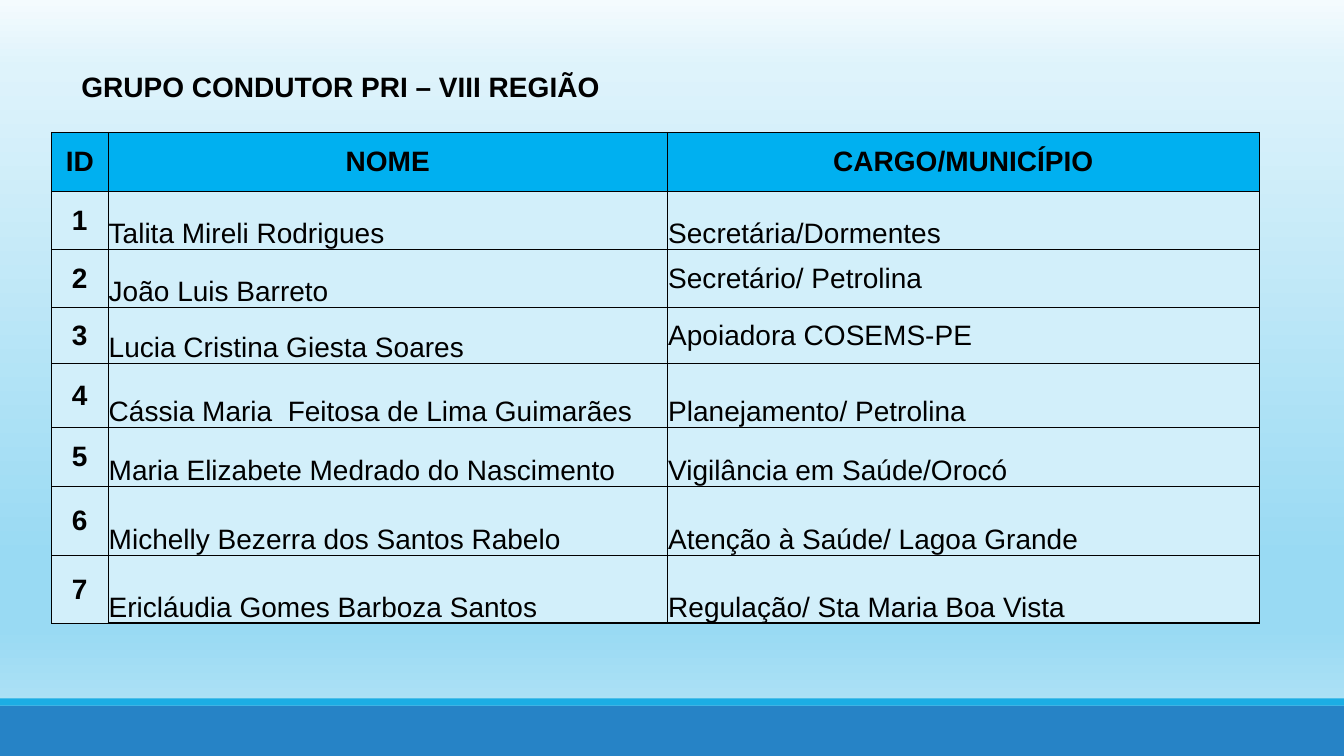
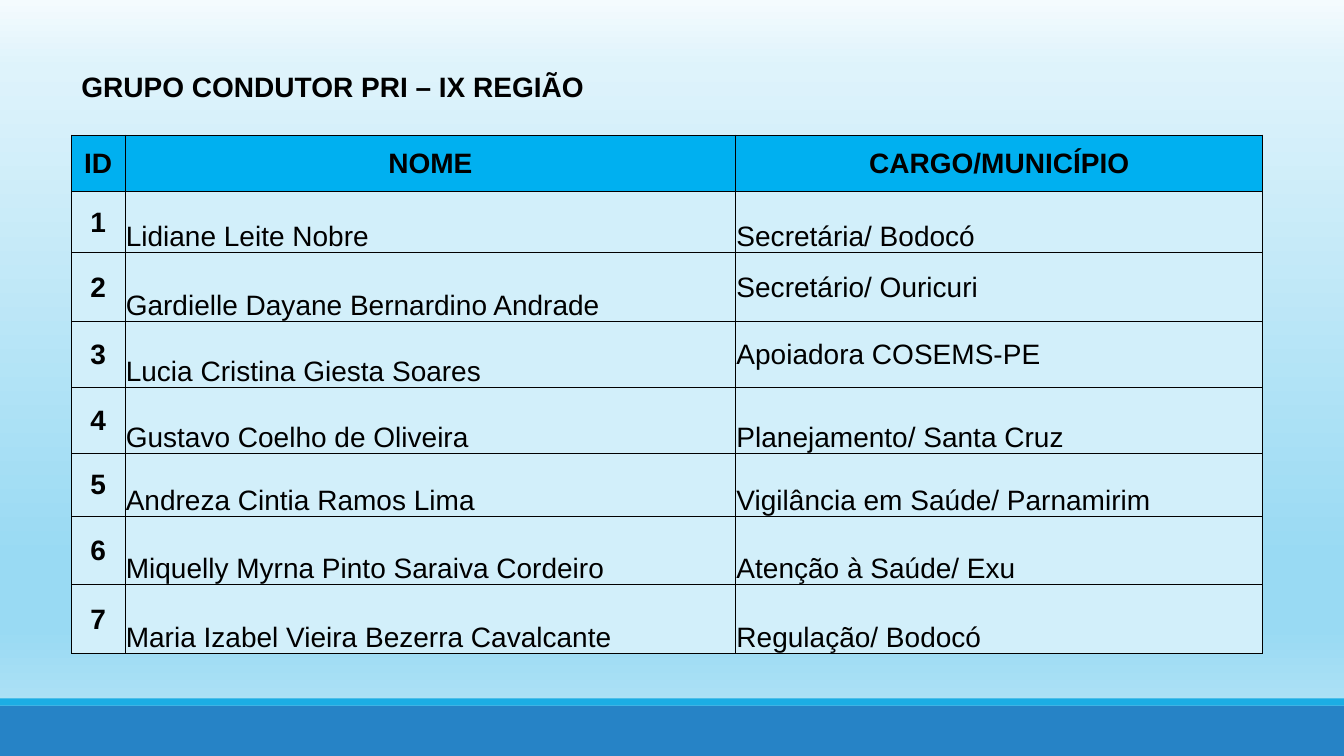
from dataclasses import dataclass

from lxml import etree
from pptx import Presentation
from pptx.dml.color import RGBColor
from pptx.enum import shapes, text
from pptx.oxml import ns
from pptx.util import Cm, Pt

HEADS = ("ID", "NOME", "CARGO/MUNICÍPIO")
GROUPS = [
    {
        "title": "GRUPO CONDUTOR PRI – VIII REGIÃO",
        "at": (1.3, 3.33),
        "cols": (1.42, 14.1, 14.91),
        "rows": (1.49, 1.46, 1.46, 1.41, 1.61, 1.49, 1.74, 1.71),
        "people": [
            ("Talita Mireli Rodrigues", "Secretária/Dormentes"),
            ("João Luis Barreto", "Secretário/ Petrolina"),
            ("Lucia Cristina Giesta Soares", "Apoiadora COSEMS-PE"),
            ("Cássia Maria  Feitosa de Lima Guimarães", "Planejamento/ Petrolina"),
            ("Maria Elizabete Medrado do Nascimento", "Vigilância em Saúde/Orocó"),
            ("Michelly Bezerra dos Santos Rabelo", "Atenção à Saúde/ Lagoa Grande"),
            ("Ericláudia Gomes Barboza Santos", "Regulação/ Sta Maria Boa Vista"),
        ],
    },
    {
        "title": "GRUPO CONDUTOR PRI – IX REGIÃO",
        "at": (1.8, 3.4),
        "cols": (1.35, 15.39, 13.28),
        "rows": (1.42, 1.55, 1.72, 1.66, 1.67, 1.58, 1.73, 1.73),
        "people": [
            ("Lidiane Leite Nobre", "Secretária/ Bodocó"),
            ("Gardielle Dayane Bernardino Andrade", "Secretário/ Ouricuri"),
            ("Lucia Cristina Giesta Soares", "Apoiadora COSEMS-PE"),
            ("Gustavo Coelho de Oliveira", "Planejamento/ Santa Cruz"),
            ("Andreza Cintia Ramos Lima", "Vigilância em Saúde/ Parnamirim"),
            ("Miquelly Myrna Pinto Saraiva Cordeiro", "Atenção à Saúde/ Exu"),
            ("Maria Izabel Vieira Bezerra Cavalcante", "Regulação/ Bodocó"),
        ],
    },
]
MID_ROLES = (2, 3)  # rows whose role is centred vertically
BOLD_RULES = (1, 5, 6, 7)  # rows with a thicker rule between name and role


@dataclass(frozen=True)
class Theme:
    font: str = "Arial"
    size: int = 20
    ink: str = "000000"
    head: str = "00B0F0"
    body: str = "D2EFFA"
    thin: float = 0.5
    thick: float = 1
    sky: tuple = ((0, "F4FBFE"), (9, "DEF3FB"), (74, "99DAF3"),
                  (83, "99DAF3"), (100, "BBE6F7"))
    # top, height, colour
    bands: tuple = ((17.78, 1.27, "2683C6"), (17.6, 0.18, "1CADE4"))


LOOK = Theme()
WIDE, HIGH = Cm(33.87), Cm(19.05)


def sub(node, tag, **attrs):
    return etree.SubElement(node, ns.qn(tag), attrs)


def paint(fill, tint):
    fill.solid()
    fill.fore_color.rgb = RGBColor.from_string(tint)


def write(frame, words, bold, align=text.PP_ALIGN.LEFT):
    para = frame.paragraphs[0]
    para.alignment = align
    run = para.add_run()
    run.text = words
    font = run.font
    font.name, font.size, font.bold = LOOK.font, Pt(LOOK.size), bold
    font.color.rgb = RGBColor.from_string(LOOK.ink)


def add_sky(master):
    fill = master.background.fill
    fill.gradient()
    fill.gradient_angle = 270
    stops = next(master.element.iter(ns.qn("a:gsLst")))
    for stop in list(stops):
        stops.remove(stop)
    for pos, tint in LOOK.sky:
        sub(sub(stops, "a:gs", pos=str(pos * 1000)), "a:srgbClr", val=tint)


def add_bands(master, slide):
    """Draw the footer bands on a slide, then move them to the master."""
    for num, (top, high, tint) in enumerate(LOOK.bands, 101):
        band = slide.shapes.add_shape(
            shapes.MSO_SHAPE.RECTANGLE, 0, Cm(top), WIDE, Cm(high))
        band.shadow.inherit = False
        paint(band.fill, tint)
        band.line.fill.background()
        band.element.nvSpPr.cNvPr.set("id", str(num))
        master.shapes.element.append(band.element)


def add_title(slide, words):
    box = slide.shapes.add_textbox(Cm(1.8), Cm(1.63), Cm(24.4), Cm(1.11))
    frame = box.text_frame
    frame.word_wrap = True
    frame.auto_size = text.MSO_AUTO_SIZE.SHAPE_TO_FIT_TEXT
    write(frame, words, True)


def rule(cell, sides):
    """Border a cell; sides maps L, R, T and B to widths in points."""
    props = cell._tc.get_or_add_tcPr()
    for side, width in sides.items():
        line = sub(props, f"a:ln{side}", w=str(Pt(width)))
        sub(sub(line, "a:solidFill"), "a:srgbClr", val=LOOK.ink)


def fill_cell(cell, row, col, words, last):
    head, key = row == 0, col == 0
    bold = row in BOLD_RULES
    sides = dict.fromkeys("LRTB", LOOK.thin)
    if bold and not key:
        sides["R" if col == 1 else "L"] = LOOK.thick
        if row == last:
            sides["B"] = LOOK.thick
    rule(cell, sides)
    paint(cell.fill, LOOK.head if head else LOOK.body)
    cell.margin_left = cell.margin_right = cell.margin_top = Cm(0.02)
    cell.margin_bottom = 0
    mid = head or key or (col == 2 and row in MID_ROLES)
    anchor = text.MSO_ANCHOR
    cell.vertical_anchor = anchor.MIDDLE if mid else anchor.BOTTOM
    align = text.PP_ALIGN
    strong = head or key
    write(cell.text_frame, words, strong, align.CENTER if strong else align.LEFT)


def add_group(slide, group):
    rows = [HEADS] + [(str(num), *who) for num, who in enumerate(group["people"], 1)]
    left, top = group["at"]
    table = slide.shapes.add_table(
        len(rows), len(HEADS), Cm(left), Cm(top),
        Cm(sum(group["cols"])), Cm(sum(group["rows"]))).table
    table.first_row = table.horz_banding = False
    for col, width in zip(table.columns, group["cols"]):
        col.width = Cm(width)
    for row, high in zip(table.rows, group["rows"]):
        row.height = Cm(high)
    for r, row in enumerate(rows):
        for c, words in enumerate(row):
            fill_cell(table.cell(r, c), r, c, words, len(rows) - 1)


def main():
    deck = Presentation()
    deck.slide_width, deck.slide_height = WIDE, HIGH
    blank = deck.slide_layouts[6]
    add_sky(deck.slide_master)
    for num, group in enumerate(GROUPS):
        slide = deck.slides.add_slide(blank)
        for spare in list(slide.placeholders):
            spare.element.getparent().remove(spare.element)
        if num == 0:
            add_bands(deck.slide_master, slide)
        add_group(slide, group)
        add_title(slide, group["title"])
    deck.save("out.pptx")


if __name__ == "__main__":
    main()
